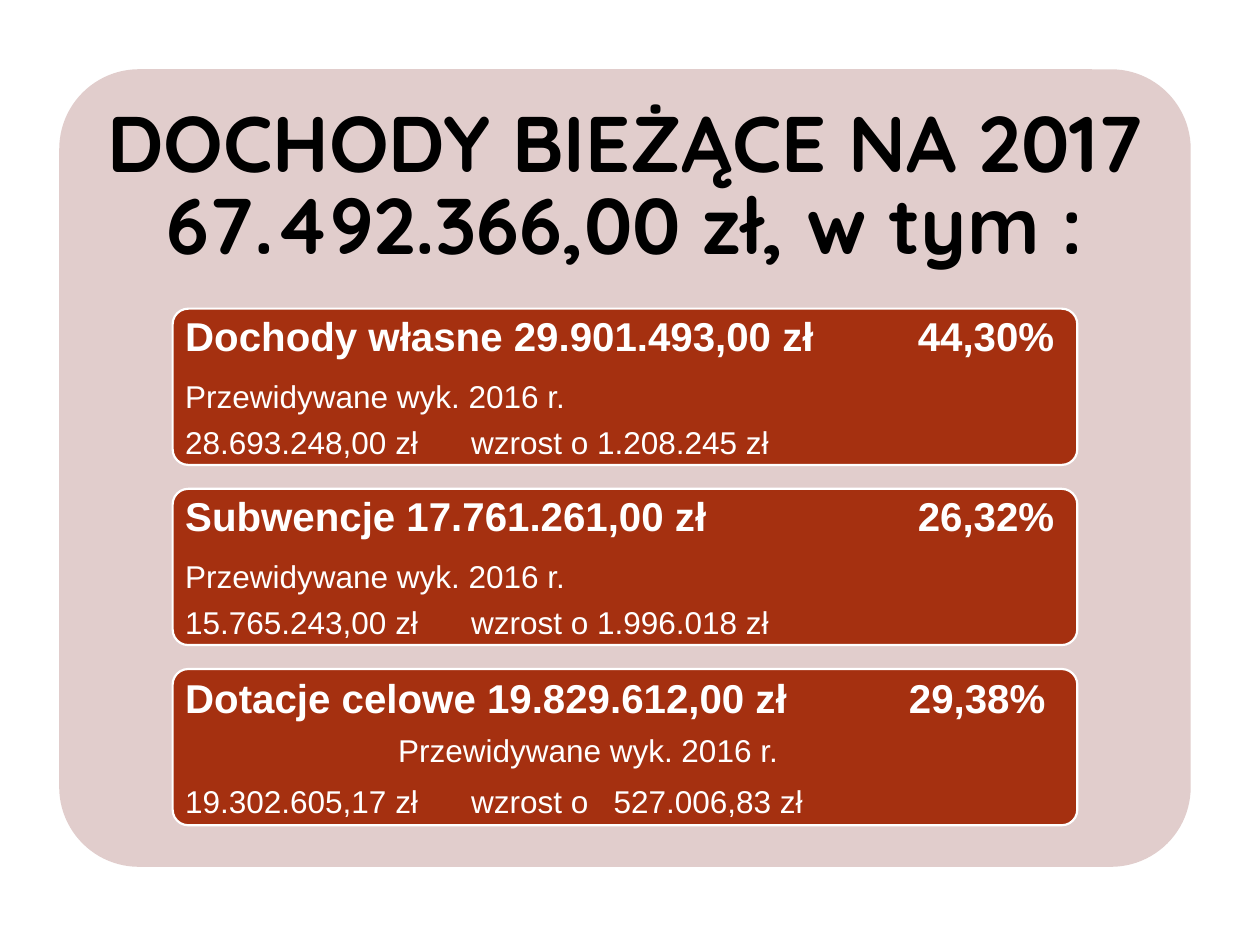
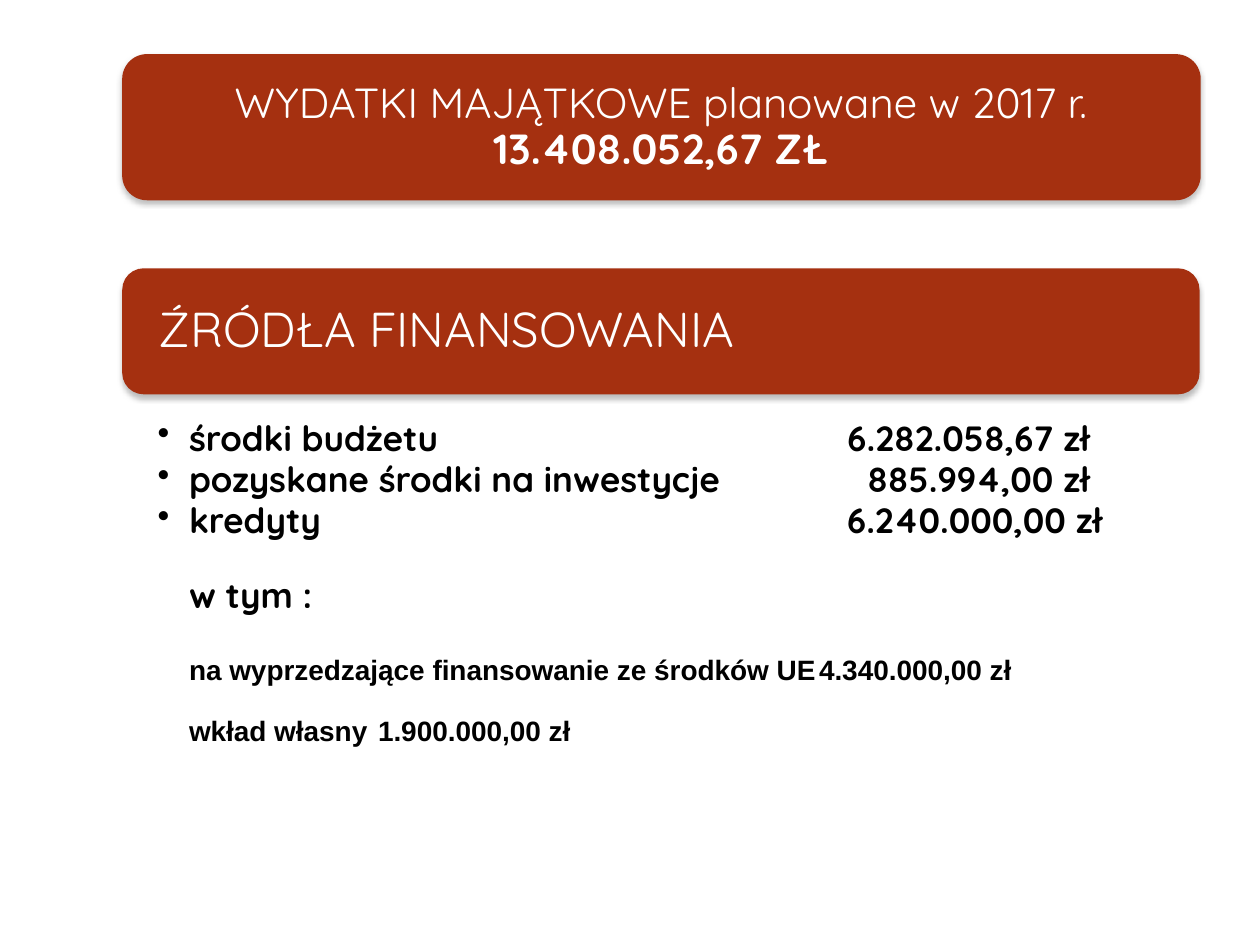
import pptx
import pptx.util
import pptx.dml.color
import pptx.enum.shapes
import pptx.enum.text
import pptx.oxml
import pptx.oxml.ns

Inches = pptx.util.Inches
Pt = pptx.util.Pt
RGB = pptx.dml.color.RGBColor
Align = pptx.enum.text.PP_ALIGN
Anchor = pptx.enum.text.MSO_ANCHOR

RUST = RGB(0xA5, 0x30, 0x10)
ROSE = RGB(0xE1, 0xCD, 0xCC)
WHITE = RGB(0xFF, 0xFF, 0xFF)
BLACK = RGB(0, 0, 0)
HEAD, BODY = "Quicksand", "Arial"

INCOME = ["DOCHODY BIEŻĄCE NA 2017", "67.492.366,00 zł, w tym :"]
# Each card: lines of text, tab stops per line, points of space after per line
PLAIN_TABS = [[(6.9, "r")], [], [(2.27, "l")]]
CARDS = [
    (["Dochody własne 29.901.493,00 zł\t44,30%",
      "Przewidywane wyk. 2016 r.",
      "28.693.248,00 zł\twzrost o 1.208.245 zł"], PLAIN_TABS, (9.7, 5, 0)),
    (["Subwencje 17.761.261,00 zł\t26,32%",
      "Przewidywane wyk. 2016 r.",
      "15.765.243,00 zł\twzrost o 1.996.018 zł"], PLAIN_TABS, (9.7, 5, 0)),
    (["Dotacje celowe 19.829.612,00 zł\t29,38%",
      "\tPrzewidywane wyk. 2016 r.",
      "19.302.605,17 zł\twzrost o\t527.006,83 zł"],
     [[(6.83, "r")], [(1.69, "l")], [(2.27, "l"), (3.4, "l")]], (5, 7.5, 0)),
]

SPENDING = ["WYDATKI MAJĄTKOWE planowane w 2017 r.", "13.408.052,67 ZŁ"]
SOURCES = "ŹRÓDŁA FINANSOWANIA"
# Text, font, size, space before, bullet, right edge of the amount
FUNDS = [
    ("środki budżetu\t6.282.058,67 zł", HEAD, 20, 0, True, 7.4),
    ("pozyskane środki na inwestycje\t885.994,00 zł", HEAD, 20, 2, True, 7.4),
    ("kredyty\t6.240.000,00 zł", HEAD, 20, 2, True, 7.5),
    ("w tym :", HEAD, 20, 21, False, None),
    ("na wyprzedzające finansowanie ze środków UE\t4.340.000,00 zł",
     BODY, 16, 23, False, 7.3),
    ("wkład własny\t1.900.000,00 zł", BODY, 16, 18, False, 7.3),
]


def add_xml(parent, xml):
    head, tail = xml.split(" ", 1)
    space = pptx.oxml.ns.nsdecls("a")
    parent.append(pptx.oxml.parse_xml(f"{head} {space} {tail}"))


def add_tabs(para, stops):
    if stops:
        tabs = "".join(f'<a:tab pos="{Inches(pos)}" algn="{side}"/>'
                       for pos, side in stops)
        add_xml(para._p.get_or_add_pPr(), f"<a:tabLst >{tabs}</a:tabLst>")


def style(para, font, size, color, bold=False):
    para.font.name = font
    para.font.size = Pt(size)
    para.font.bold = bold
    para.font.color.rgb = color


def add_panel(slide, box, fill, round_by, line=None):
    kind = pptx.enum.shapes.MSO_SHAPE.ROUNDED_RECTANGLE
    panel = slide.shapes.add_shape(kind, *map(Inches, box))
    panel.adjustments[0] = round_by
    panel.shadow.inherit = False
    panel.fill.solid()
    panel.fill.fore_color.rgb = fill
    if line is None:
        panel.line.fill.background()
    else:
        panel.line.color.rgb = line
        panel.line.width = Pt(1.25)
    return panel


def add_band(slide, box):
    """Rust panel with a soft shadow below it."""
    band = add_panel(slide, box, RUST, 0.17)
    effects = band._element.spPr.find(pptx.oxml.ns.qn("a:effectLst"))
    add_xml(effects, f'<a:outerShdw blurRad="{Pt(3)}" dist="{Pt(2)}" '
            'dir="5400000" algn="ctr" rotWithShape="0"><a:srgbClr val="000000">'
            '<a:alpha val="25000"/></a:srgbClr></a:outerShdw>')


def set_frame(shape, lines, insets, anchor=Anchor.MIDDLE):
    """Fill the shape with one paragraph per line and return them."""
    frame = shape.text_frame
    frame.word_wrap = True
    frame.auto_size = pptx.enum.text.MSO_AUTO_SIZE.NONE
    frame.vertical_anchor = anchor
    (frame.margin_left, frame.margin_top,
     frame.margin_right, frame.margin_bottom) = map(Inches, insets)
    frame.text = "\n".join(lines)
    return frame.paragraphs


def add_text(slide, box, *args):
    return set_frame(slide.shapes.add_textbox(*map(Inches, box)), *args)


def set_title(slide, box, lines, insets, spacing, size, color, bolds):
    title = slide.shapes.title
    title.left, title.top, title.width, title.height = map(Inches, box)
    tree = title.element.getparent()
    tree.append(title.element)  # bring in front of its panel
    for para, bold in zip(set_frame(title, lines, insets), bolds):
        para.alignment = Align.CENTER
        para.line_spacing = spacing
        para.space_before = Pt(0)
        style(para, HEAD, size, color, bold)


def add_card(slide, top, lines, stops, gaps):
    add_panel(slide, (1.37, top, 7.18, 1.24), RUST, 0.1, WHITE)
    paras = add_text(slide, (1.41, top + 0.03, 7.11, 1.17), lines,
                     (0.06, 0.05, 0.06, 0.05))
    for row, para in enumerate(paras):
        add_tabs(para, stops[row])
        para.space_after = Pt(gaps[row])
        style(para, BODY, 18 if row else 23, WHITE, row == 0)


def build_income(slide):
    add_panel(slide, (0.47, 0.55, 8.98, 6.33), ROSE, 0.1)
    set_title(slide, (0.47, 0.55, 8.98, 1.9), INCOME, [0.19] * 4,
              0.87, 45, BLACK, (True, True))
    for num, card in enumerate(CARDS):
        add_card(slide, 2.45 + 1.43 * num, *card)


def build_spending(slide):
    side = (0.24, 0, 0.24, 0)
    add_band(slide, (0.97, 0.43, 8.56, 1.16))
    set_title(slide, (1.02, 0.49, 8.45, 1.05), SPENDING, side,
              0.9, 24, WHITE, (False, True))
    paras = add_text(slide, (0.55, 2.63, 8.98, 4.59), [row[0] for row in FUNDS],
                     (0.7, 0.71, 0.3, 0.16), Anchor.TOP)
    for para, (_, font, size, gap, bullet, edge) in zip(paras, FUNDS):
        props = para._p.get_or_add_pPr()
        props.set("marL", str(Inches(0.25)))
        props.set("indent", str(Inches(-0.25 if bullet else 0)))
        if bullet:
            add_xml(props, '<a:buChar char="•"/>')
        add_tabs(para, [(edge, "r")] if edge else [])
        para.line_spacing = 0.9
        para.space_before = Pt(gap)
        style(para, font, size, BLACK, True)
    add_band(slide, (0.97, 2.13, 8.55, 1))
    label = add_text(slide, (1.02, 2.18, 8.46, 0.9), [SOURCES], side)[0]
    label.line_spacing = 0.9
    style(label, HEAD, 28, WHITE)


def main():
    deck = pptx.Presentation()
    deck.slide_width, deck.slide_height = Inches(10), Inches(7.5)
    for build in (build_income, build_spending):
        build(deck.slides.add_slide(deck.slide_layouts[5]))
    deck.save("out.pptx")


if __name__ == "__main__":
    main()
